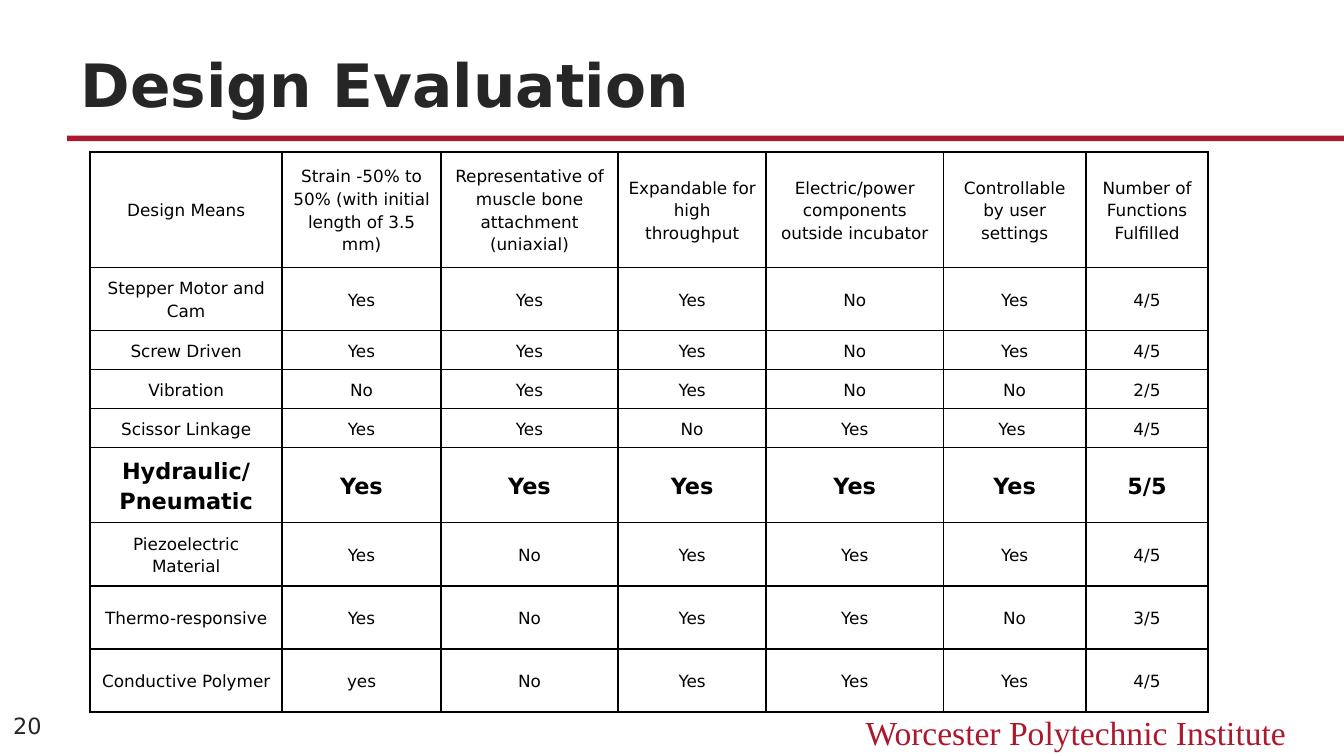
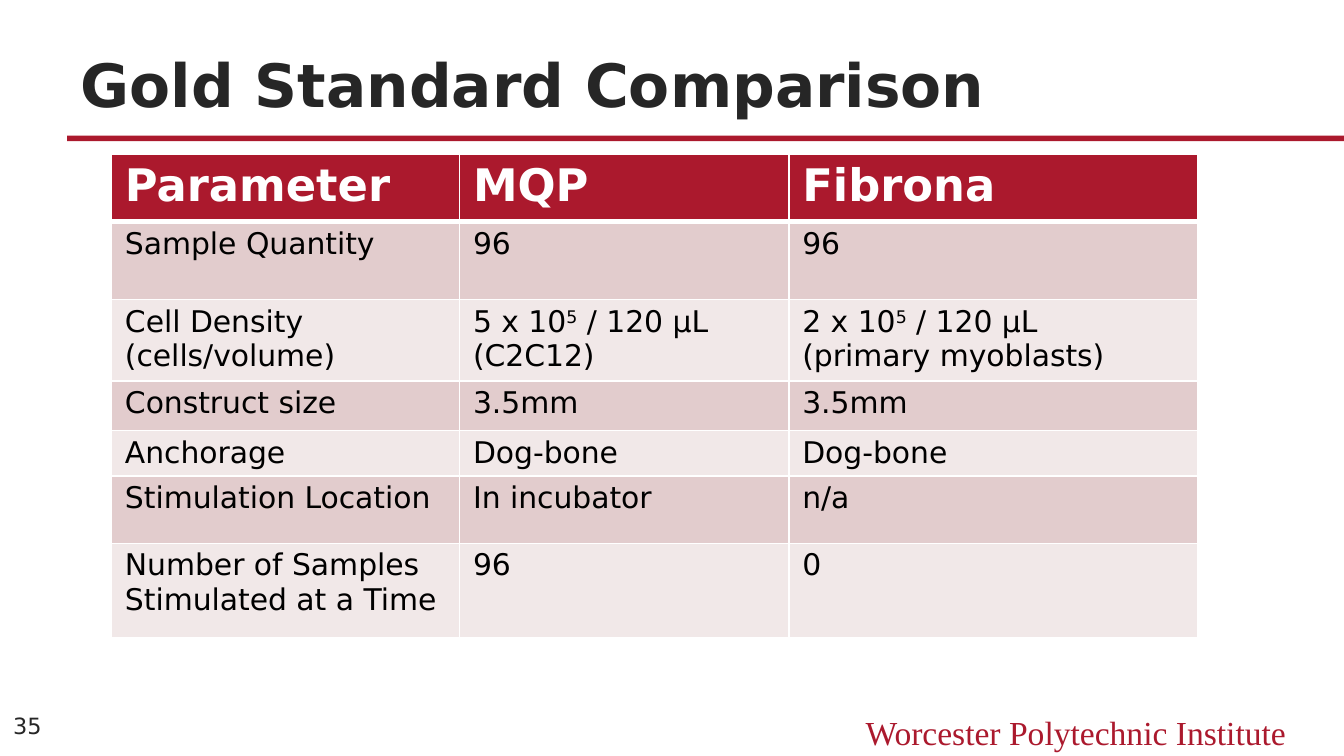
from pptx import Presentation
from pptx.dml.color import RGBColor
from pptx.enum.shapes import MSO_SHAPE
from pptx.enum.text import MSO_ANCHOR, MSO_AUTO_SIZE, PP_ALIGN
from pptx.util import Inches, Pt
from lxml.etree import SubElement
from pptx.oxml.ns import qn

PAGE_WIDTH = 10
CRIMSON, CHARCOAL, BLACK, WHITE = "AB192D", "262626", "000000", "FFFFFF"
BAND_FILLS = ("E2CCCD", "F1E8E8")
SANS, SERIF = "DejaVu Sans", "Times New Roman"
INSTITUTE = "Worcester Polytechnic Institute"

EVALUATION = [
    ("Design Means", "Strain -50% to 50% (with initial length of 3.5 mm)",
     "Representative of muscle bone attachment (uniaxial)", "Expandable for high throughput",
     "Electric/power components outside incubator", "Controllable by user settings",
     "Number of Functions Fulfilled"),
    ("Stepper Motor and Cam", "Yes", "Yes", "Yes", "No", "Yes", "4/5"),
    ("Screw Driven", "Yes", "Yes", "Yes", "No", "Yes", "4/5"),
    ("Vibration", "No", "Yes", "Yes", "No", "No", "2/5"),
    ("Scissor Linkage", "Yes", "Yes", "No", "Yes", "Yes ", "4/5"),
    ("Hydraulic/ Pneumatic", "Yes", "Yes", "Yes", "Yes", "Yes", "5/5"),
    ("Piezoelectric Material", "Yes", "No", "Yes", "Yes", "Yes", "4/5"),
    ("Thermo-responsive", "Yes", "No", "Yes", "Yes", "No", "3/5"),
    ("Conductive Polymer", "yes", "No", "Yes", "Yes", "Yes", "4/5"),
]
EVALUATION_WIDTHS = (1.43, 1.18, 1.32, 1.1, 1.32, 1.06, 0.91)
EVALUATION_HEIGHTS = (0.86, 0.47, 0.29, 0.29, 0.29, 0.56, 0.47, 0.47, 0.47)
CHOSEN_DESIGN = "Hydraulic/ Pneumatic"

COMPARISON = [
    ("Parameter", "MQP", "Fibrona"),
    ("Sample Quantity", "96", "96"),
    ("Cell Density (cells/volume)", "5 x 10^5^ / 120 μL (C2C12)",
     "2 x 10^5^ / 120 μL\n(primary myoblasts)"),
    ("Construct size", "3.5mm", "3.5mm"),
    ("Anchorage", "Dog-bone", "Dog-bone"),
    ("Stimulation Location", "In incubator", "n/a"),
    ("Number of Samples Stimulated at a Time", "96", "0"),
]
COMPARISON_WIDTHS = (2.59, 2.45, 3.04)
COMPARISON_HEIGHTS = (0.5, 0.58, 0.58, 0.37, 0.32, 0.5, 0.7)


def color(value):
    return RGBColor.from_string(value)


def write(frame, text, size, fill=BLACK, font=SANS, bold=False, align=PP_ALIGN.LEFT,
          line_spacing=None, space_after=None):
    frame.word_wrap = True
    for index, line in enumerate(text.split("\n")):
        para = frame.add_paragraph() if index else frame.paragraphs[0]
        para.alignment = align
        if line_spacing:
            para.line_spacing = line_spacing
        if space_after:
            para.space_after = Pt(space_after)
        for position, piece in enumerate(line.split("^")):
            span = para.add_run()
            span.text = piece
            span.font.size = Pt(size)
            span.font.name = font
            span.font.bold = bold
            span.font.color.rgb = color(fill)
            if position % 2:
                span._r.get_or_add_rPr().set("baseline", "30000")


def add_text(page, text, left, top, width, height, **style):
    box = page.shapes.add_textbox(Inches(left), Inches(top), Inches(width), Inches(height))
    write(box.text_frame, text, **style)
    return box.text_frame


def add_page(deck, title, number):
    page = deck.slides.add_slide(deck.slide_layouts[5])
    rule = page.shapes.add_shape(MSO_SHAPE.RECTANGLE, Inches(0.5), Inches(1.01),
                                 Inches(9.5), Inches(0.04))
    rule.shadow.inherit = False
    rule.fill.solid()
    rule.fill.fore_color.rgb = color(CRIMSON)
    rule.line.fill.background()
    footer = add_text(page, INSTITUTE, 6, 5.25, 3.67, 0.4, size=18, fill=CRIMSON,
                      font=SERIF, align=PP_ALIGN.RIGHT)
    footer.auto_size = MSO_AUTO_SIZE.SHAPE_TO_FIT_TEXT
    heading = page.shapes.title
    heading.left, heading.top = Inches(0.5), Inches(0.28)
    heading.width, heading.height = Inches(9), Inches(0.66)
    heading.text_frame.vertical_anchor = MSO_ANCHOR.BOTTOM
    heading.text_frame.auto_size = MSO_AUTO_SIZE.NONE
    write(heading.text_frame, title, size=32, fill=CHARCOAL, bold=True)
    label = add_text(page, number, 0, 5.24, 0.5, 0.32, size=12, fill=CHARCOAL)
    label.vertical_anchor = MSO_ANCHOR.MIDDLE
    return page


def set_borders(cell, stroke, top=1, bottom=1):
    properties = cell._tc.get_or_add_tcPr()
    for side, width in (("L", 1), ("R", 1), ("T", top), ("B", bottom)):
        line = SubElement(properties, qn(f"a:ln{side}"), w=str(Pt(width)))
        solid = SubElement(line, qn("a:solidFill"))
        SubElement(solid, qn("a:srgbClr"), val=stroke)


def add_grid(page, rows, left, top, widths, heights, format_cell):
    frame = page.shapes.add_table(len(rows), len(widths), Inches(left), Inches(top),
                                  Inches(sum(widths)), Inches(sum(heights)))
    table = frame.table
    table.first_row = table.horz_banding = False
    for column, width in zip(table.columns, widths):
        column.width = Inches(width)
    for row, height in zip(table.rows, heights):
        row.height = Inches(height)
    for row_index, row in enumerate(rows):
        for column_index, text in enumerate(row):
            format_cell(table.cell(row_index, column_index), text, row_index, column_index)


def finish_cell(cell, fill, side, edge):
    cell.fill.solid()
    cell.fill.fore_color.rgb = color(fill)
    cell.margin_left = cell.margin_right = Inches(side)
    cell.margin_top = cell.margin_bottom = Pt(edge)


def format_evaluation(cell, text, row, column):
    chosen = EVALUATION[row][0] == CHOSEN_DESIGN
    set_borders(cell, BLACK)
    finish_cell(cell, WHITE, side=0.07, edge=3.4 if column < 4 else 0)
    cell.vertical_anchor = MSO_ANCHOR.MIDDLE
    write(cell.text_frame, text, size=12 if chosen else 9, bold=chosen,
          align=PP_ALIGN.CENTER, line_spacing=1.15, space_after=10)


def format_comparison(cell, text, row, column):
    header = row == 0
    set_borders(cell, WHITE, top=3 if row == 1 else 1, bottom=3 if header else 1)
    finish_cell(cell, CRIMSON if header else BAND_FILLS[(row - 1) % 2], side=0.1, edge=2.6)
    write(cell.text_frame, text, size=24 if header else 16,
          fill=WHITE if header else BLACK, bold=header)


def main():
    deck = Presentation()
    deck.slide_width = Inches(PAGE_WIDTH)
    deck.slide_height = Inches(PAGE_WIDTH * 9 / 16)
    page = add_page(deck, "Design Evaluation", "20")
    add_grid(page, EVALUATION, 0.67, 1.13, EVALUATION_WIDTHS, EVALUATION_HEIGHTS,
             format_evaluation)
    page = add_page(deck, "Gold Standard Comparison", "35")
    add_grid(page, COMPARISON, 0.83, 1.15, COMPARISON_WIDTHS, COMPARISON_HEIGHTS,
             format_comparison)
    deck.save("out.pptx")


if __name__ == "__main__":
    main()
